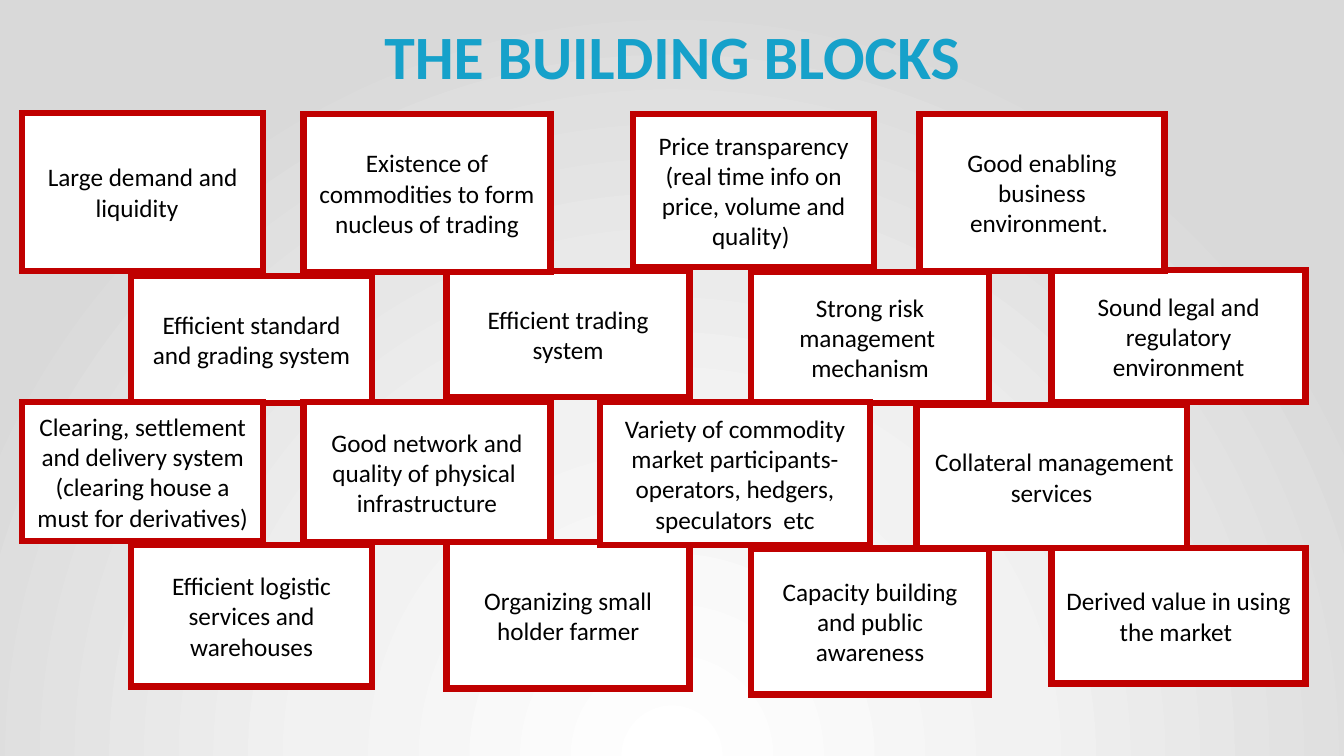
from lxml.etree import SubElement
from pptx import Presentation
from pptx.dml.color import RGBColor
from pptx.enum.shapes import MSO_SHAPE
from pptx.enum.text import MSO_ANCHOR, PP_ALIGN
from pptx.oxml.ns import qn
from pptx.util import Inches, Pt

BLUE = RGBColor(0x16, 0xA1, 0xCA)
RED = RGBColor(0xC0, 0x00, 0x00)
BLACK = RGBColor(0x00, 0x00, 0x00)
WHITE = RGBColor(0xFF, 0xFF, 0xFF)
BACKGROUND_STOPS = [(0, "FFFFFF"), (46, "F2F2F2"), (100, "D9D9D9")]

# Left and width of the columns that two rows of blocks share
OUTER_1, OUTER_2 = (0.22, 2.39), (3.01, 2.45)
INNER_1, INNER_2, INNER_3, INNER_4 = (1.3, 2.39), (4.43, 2.41), (7.45, 2.36), (10.43, 2.52)

# Column, top, height and text of each block, from back to front
BLOCKS = [
    (INNER_2, 2.69, 1.25, "Efficient trading system"),
    (INNER_4, 2.68, 1.31, "Sound legal and regulatory environment"),
    (INNER_3, 2.7, 1.3, "Strong risk management  mechanism"),
    (INNER_1, 2.74, 1.26, "Efficient standard and grading system"),
    ((6.28, 2.39), 1.13, 1.52, "Price transparency (real time info on price, volume and quality) "),
    ((9.12, 2.43), 1.13, 1.56, "Good enabling business environment. "),
    (OUTER_2, 3.99, 1.39, "Good network and quality of physical  infrastructure"),
    ((9.09, 2.68), 4.02, 1.42, " Collateral management services"),
    (OUTER_1, 3.99, 1.38, "Clearing, settlement and delivery system (clearing house a must for derivatives)"),
    (INNER_2, 5.38, 1.45, "Organizing small holder farmer"),
    (INNER_3, 5.44, 1.45, "Capacity building and public awareness"),
    (INNER_4, 5.44, 1.34, "Derived value in using the market "),
    (INNER_1, 5.41, 1.4, "Efficient logistic services and warehouses"),
    (OUTER_1, 1.12, 1.57, "Large demand and liquidity  "),
    (OUTER_2, 1.13, 1.57, "Existence of commodities to form nucleus of trading"),
    ((5.95, 2.68), 3.99, 1.42, "Variety of commodity market participants- operators, hedgers, speculators  etc"),
]


def write_centred(shape, text, size, color, bold=False):
    frame = shape.text_frame
    frame.word_wrap = True
    frame.vertical_anchor = MSO_ANCHOR.MIDDLE
    para = frame.paragraphs[0]
    para.alignment = PP_ALIGN.CENTER
    span = para.add_run()
    span.text = text
    span.font.name = "Calibri"
    span.font.size = Pt(size)
    span.font.bold = bold
    span.font.color.rgb = color
    return para


deck = Presentation()
deck.slide_width = Inches(13.33)
deck.slide_height = Inches(7.5)
page = deck.slides.add_slide(deck.slide_layouts[6])

# Circular gradient centred below the slide
page.background.fill.gradient()
gradient = next(page.element.iter(qn("a:gradFill")))
for child in list(gradient):
    gradient.remove(child)
stops = SubElement(gradient, qn("a:gsLst"))
for percent, color in BACKGROUND_STOPS:
    stop = SubElement(stops, qn("a:gs"), pos=str(percent * 1000))
    SubElement(stop, qn("a:srgbClr"), val=color)
circle = SubElement(gradient, qn("a:path"), path="circle")
SubElement(circle, qn("a:fillToRect"), l="50000", t="130000", r="50000", b="-30000")

title = page.shapes.add_textbox(Inches(0.92), Inches(0.13), Inches(11.5), Inches(0.92))
title_para = write_centred(title, "THE BUILDING BLOCKS", 44, BLUE, bold=True)
title_para.line_spacing = 0.9

for (left, width), top, height, text in BLOCKS:
    block = page.shapes.add_shape(
        MSO_SHAPE.RECTANGLE, Inches(left), Inches(top), Inches(width), Inches(height))
    block.shadow.inherit = False
    block.fill.solid()
    block.fill.fore_color.rgb = WHITE
    block.line.color.rgb = RED
    block.line.width = Pt(4.5)
    outline = block.element.spPr.find(qn("a:ln"))
    SubElement(outline, qn("a:miter"), lim="800000")
    write_centred(block, text, 18, BLACK)

deck.save("out.pptx")
